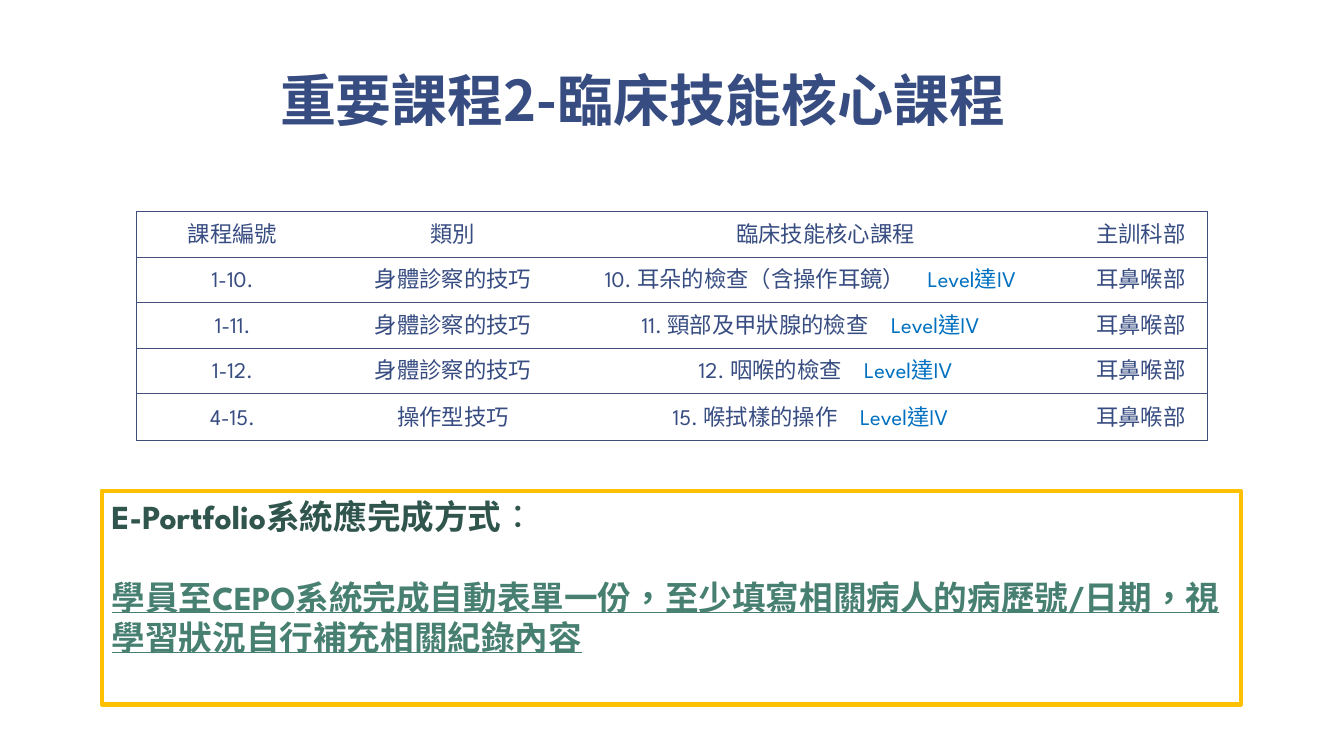
from lxml.etree import SubElement
from pptx import Presentation
from pptx.dml.color import RGBColor
from pptx.enum.lang import MSO_LANGUAGE_ID
from pptx.enum.shapes import MSO_SHAPE
from pptx.enum.text import MSO_ANCHOR, MSO_AUTO_SIZE, PP_ALIGN
from pptx.oxml.ns import qn
from pptx.util import Pt

# Content
TITLE = "重要課程2-臨床技能核心課程"
HEADINGS = ["課程編號", "類別", "臨床技能核心課程", "主訓科部"]
EXAM, DEPARTMENT, LEVEL = "身體診察的技巧", "耳鼻喉部", "Level達IV"
# number, category, skill, whether the skill has a hanging indent
COURSES = [
    ("1-10.", EXAM, "10. 耳朵的檢查（含操作耳鏡）", True),
    ("1-11.", EXAM, "11. 頸部及甲狀腺的檢查", True),
    ("1-12.", EXAM, "12. 咽喉的檢查", False),
    ("4-15.", "操作型技巧", "15. 喉拭樣的操作", True),
]
METHOD, COLON = "E-Portfolio系統應完成方式", "："
TASK = "學員至CEPO系統完成自動表單一份，至少填寫相關病人的病歷號/日期，視學習狀況自行補充相關紀錄內容"

# Look
COLORS = {"navy": "374C81", "rule": "414E77", "level": "0070C0", "white": "FFFFFF",
          "frame": "FFC000", "method": "2F554C", "task": "477F71"}
TITLE_FONT, BODY_FONT = "Noto Sans CJK TC", "League Spartan"
COLUMN_WIDTHS = [116, 198.7, 333.7, 116.6]
ROW_HEIGHTS = [32.5] * 4 + [33.8]
FIRST_LINE, HANGING = (0, 21.6), (19.4, -19.4)


def color(name):
    return RGBColor.from_string(COLORS[name])


def style(run, size, color_name, typeface=BODY_FONT, bold=False, underline=False):
    font = run.font
    font.size, font.bold, font.underline = Pt(size), bold, underline
    font.color.rgb = color(color_name)
    font.name = typeface
    font.language_id = MSO_LANGUAGE_ID.TRADITIONAL_CHINESE
    SubElement(font._element, qn("a:ea"), typeface=typeface)


def add_run(paragraph, text, *args, **kwargs):
    run = paragraph.add_run()
    run.text = text
    style(run, *args, **kwargs)


def set_borders(cell, sides):
    properties = cell._tc.get_or_add_tcPr()
    for side in "LRTB":
        border = SubElement(properties, qn(f"a:ln{side}"), w=str(Pt(1)))
        if side in sides:
            fill = SubElement(border, qn("a:solidFill"))
            SubElement(fill, qn("a:srgbClr"), val=COLORS["rule"])
        else:
            SubElement(border, qn("a:noFill"))


deck = Presentation()
deck.slide_width, deck.slide_height = Pt(960), Pt(540)
slide = deck.slides.add_slide(deck.slide_layouts[5])

# Title
title = slide.shapes.title
title.left, title.top, title.width, title.height = Pt(31.7), Pt(20.9), Pt(854.6), Pt(79.2)
heading = title.text_frame
heading.text = TITLE
heading.auto_size = MSO_AUTO_SIZE.NONE
heading.vertical_anchor = MSO_ANCHOR.BOTTOM
heading.margin_left = heading.margin_right = Pt(9.4)
heading.margin_top = heading.margin_bottom = Pt(5)
heading.paragraphs[0].alignment = PP_ALIGN.CENTER
heading.paragraphs[0].line_spacing = 0.85
style(heading.paragraphs[0].runs[0], 40, "navy", TITLE_FONT, bold=True)

# Course table
rows = [HEADINGS] + [[number, category, skill, DEPARTMENT]
                     for number, category, skill, _ in COURSES]
courses = slide.shapes.add_table(len(rows), len(HEADINGS), Pt(97.4), Pt(151.2),
                                 Pt(sum(COLUMN_WIDTHS)), Pt(sum(ROW_HEIGHTS))).table
for column, width in zip(courses.columns, COLUMN_WIDTHS):
    column.width = Pt(width)
for r, (row, height) in enumerate(zip(rows, ROW_HEIGHTS)):
    courses.rows[r].height = Pt(height)
    for c, text in enumerate(row):
        cell = courses.cell(r, c)
        set_borders(cell, "TB" + {0: "L", len(row) - 1: "R"}.get(c, ""))
        cell.fill.solid()
        cell.fill.fore_color.rgb = color("white")
        cell.vertical_anchor = MSO_ANCHOR.MIDDLE
        cell.margin_left = cell.margin_right = Pt(1.4)
        cell.margin_top = cell.margin_bottom = 0

        paragraph = cell.text_frame.paragraphs[0]
        paragraph.alignment = PP_ALIGN.CENTER
        paragraph.line_spacing = Pt(18.4)
        is_skill = r > 0 and c == 2
        margin, indent = HANGING if is_skill and COURSES[r - 1][3] else FIRST_LINE
        layout = paragraph._p.get_or_add_pPr()
        layout.set("marL", str(Pt(margin)))
        layout.set("indent", str(Pt(indent)))
        add_run(paragraph, text + ("　" if is_skill else ""), 16, "navy")
        if is_skill:
            add_run(paragraph, LEVEL, 16, "level")

# Framed instructions
instructions = slide.shapes.add_shape(MSO_SHAPE.RECTANGLE, Pt(72.7), Pt(350.6), Pt(813.6), Pt(152.6))
instructions.shadow.inherit = False
instructions.fill.background()
instructions.line.color.rgb = color("frame")
instructions.line.width = Pt(3)
body = instructions.text_frame
body.word_wrap = True
body.vertical_anchor = MSO_ANCHOR.TOP
method, task = body.paragraphs[0], body.add_paragraph()
method.alignment = task.alignment = PP_ALIGN.LEFT
add_run(method, METHOD, 24, "method", bold=True)
add_run(method, COLON, 24, "method")
task.space_before = Pt(28.8)
add_run(task, TASK, 24, "task", bold=True, underline=True)

deck.save("out.pptx")
